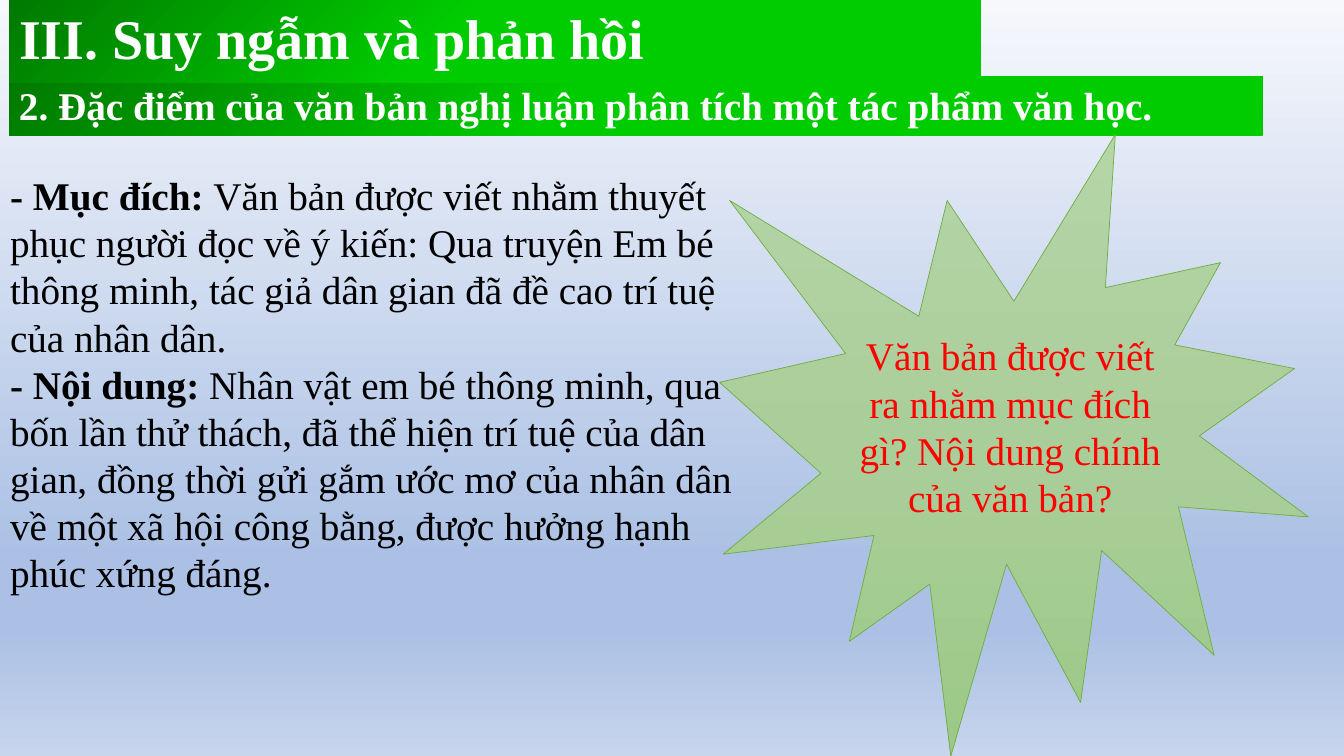
from copy import deepcopy
from pptx import Presentation
from pptx.util import Pt
from pptx.dml.color import RGBColor as RGB
from pptx.enum.shapes import MSO_SHAPE as Shape
from pptx.enum.text import MSO_ANCHOR as Anchor, MSO_AUTO_SIZE as Fit, PP_ALIGN as Align
from pptx.oxml.ns import qn

COLORS = {
    "white": "FFFFFF", "black": "000000", "red": "FF0000", "edge": "70AD47",
    "dark": "007900", "green": "00CC00",
    "sky": "F6F8FC", "blue": "ABC0E4", "mist": "C7D5ED",
    "leaf": "B5D5A7", "moss": "AACE9A", "fern": "9CC987",
}
BANNER = [(0, "dark"), (45, "green"), (100, "green")]


def shade(fill, root, stops, angle):
    """Give fill, found under root, a gradient of (percent, colour) stops; angle is clockwise."""
    fill.gradient()
    fill.gradient_angle = 360 - angle
    rows = next(root.iter(qn("a:gsLst")))
    for _ in stops[2:]:
        rows.append(deepcopy(rows[0]))
    for stop, (percent, name) in zip(fill.gradient_stops, stops):
        stop.position = percent / 100
        stop.color.rgb = RGB.from_string(COLORS[name])


def write(shape, lines, size, color, align, anchor, space=1.0):
    """Fill shape with paragraphs, each a list of (text, bold) runs."""
    frame = shape.text_frame
    frame.word_wrap = True
    frame.auto_size = Fit.NONE
    frame.vertical_anchor = anchor
    for i, line in enumerate(lines):
        para = frame.add_paragraph() if i else frame.paragraphs[0]
        para.alignment = align
        para.line_spacing = space
        para.space_before = para.space_after = Pt(0)
        for text, bold in line:
            run = para.add_run()
            run.text = text
            font = run.font
            font.name = "Times New Roman"
            font.size = Pt(size)
            font.bold = bold
            font.color.rgb = RGB.from_string(COLORS[color])


deck = Presentation()
deck.slide_width, deck.slide_height = Pt(960), Pt(540)
slide = deck.slides.add_slide(deck.slide_layouts[1])
shapes = slide.shapes
title, body = shapes.title, slide.placeholders[1]

# Background
back = slide.background.fill
back.solid()
shade(back, slide.element, [(0, "sky"), (74, "blue"), (83, "blue"), (100, "mist")], 90)

# Subtitle bar, behind the title
bar = shapes.add_shape(Shape.RECTANGLE, Pt(6.5), Pt(54.5), Pt(895), Pt(42))
bar.shadow.inherit = False
bar.line.fill.background()
shade(bar.fill, bar.element, BANNER, 45)
write(bar, [[("2. Đặc điểm của văn bản nghị luận phân tích một tác phẩm văn học.", True)]],
      28, "white", Align.LEFT, Anchor.TOP)
title.element.addprevious(bar.element)

# Title
title.left, title.top, title.width, title.height = Pt(6.5), Pt(0), Pt(694), Pt(59)
shade(title.fill, title.element, BANNER, 45)
write(title, [[("III. Suy ngẫm và phản hồi", True)]],
      40, "white", Align.LEFT, Anchor.MIDDLE, 0.9)

# Answer
body.left, body.top, body.width, body.height = Pt(0), Pt(119), Pt(546.5), Pt(346)
write(body, [
    [("- Mục đích: ", True),
     ("Văn bản được viết nhằm thuyết phục người đọc về ý kiến: Qua truyện Em bé thông minh, "
      "tác giả dân gian đã đề cao trí tuệ của nhân dân.", False)],
    [("- Nội dung:", True),
     (" Nhân vật em bé thông minh, qua bốn lần thử thách, đã thể hiện trí tuệ của dân gian, "
      "đồng thời gửi gắm ước mơ của nhân dân về một xã hội công bằng, "
      "được hưởng hạnh phúc xứng đáng.", False)],
], 28, "black", Align.LEFT, Anchor.TOP)
for para in body.text_frame.paragraphs:
    props = para._p.get_or_add_pPr()
    props.set("marL", "0")
    props.set("indent", "0")
    props.append(props.makeelement(qn("a:buNone"), {}))

# Question
burst = shapes.add_shape(Shape.EXPLOSION1, Pt(514), Pt(96), Pt(420.5), Pt(444))
burst.shadow.inherit = False
shade(burst.fill, burst.element, [(0, "leaf"), (50, "moss"), (100, "fern")], 90)
burst.line.color.rgb = RGB.from_string(COLORS["edge"])
burst.line.width = Pt(0.5)
write(burst, [[("Văn bản được viết ra nhằm mục đích gì? Nội dung chính của văn bản?", False)]],
      28, "red", Align.CENTER, Anchor.MIDDLE)

deck.save("out.pptx")
